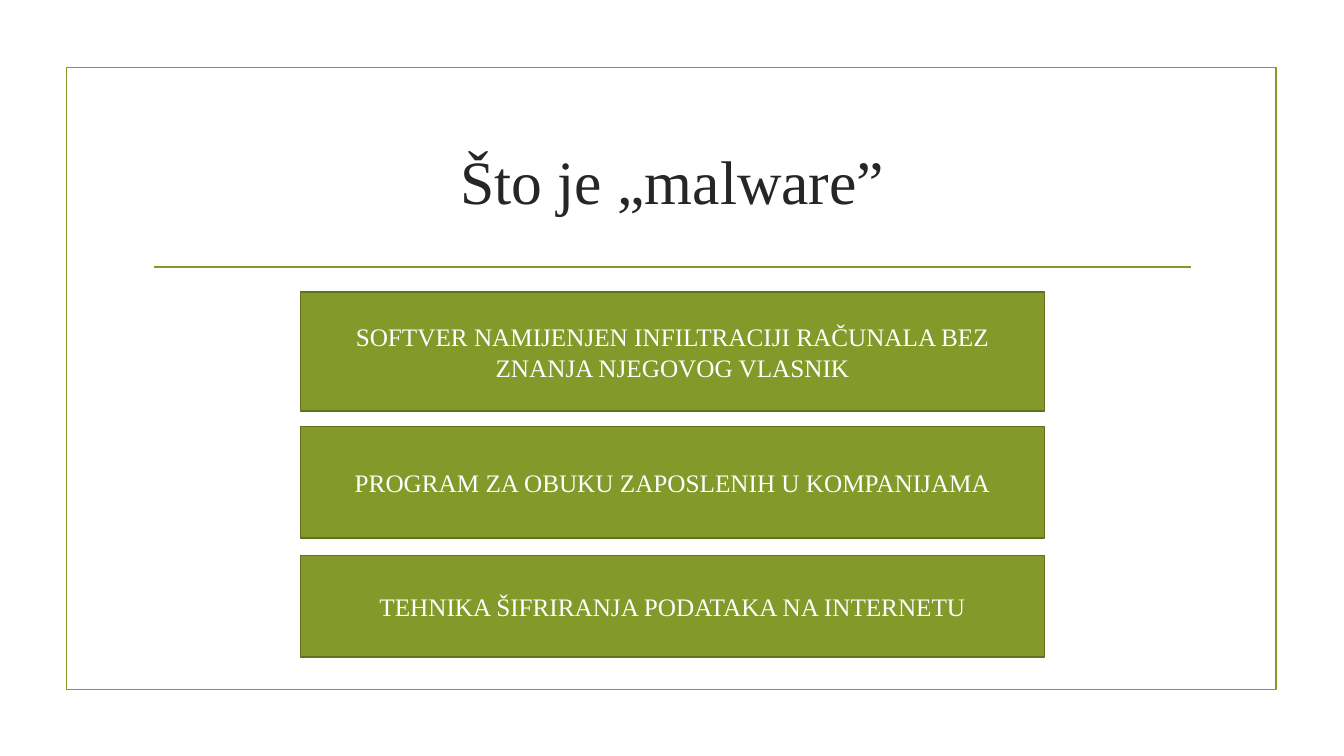
import lxml.etree
import pptx
import pptx.dml.color
import pptx.enum.shapes
import pptx.enum.text
import pptx.oxml.ns
import pptx.util

Inches = pptx.util.Inches
RGBColor = pptx.dml.color.RGBColor
Shapes = pptx.enum.shapes.MSO_SHAPE

OLIVE = RGBColor(0x83, 0x99, 0x2A)
DARK_OLIVE = RGBColor(0x61, 0x71, 0x1F)
CHARCOAL = RGBColor(0x26, 0x26, 0x26)
WHITE = RGBColor(0xFF, 0xFF, 0xFF)

ANSWER_LEFT, ANSWER_WIDTH = 2.98, 7.38
ANSWERS = [
    (Shapes.RECTANGLE, 2.9, 1.18,
     "SOFTVER NAMIJENJEN INFILTRACIJI RAČUNALA BEZ ZNANJA NJEGOVOG VLASNIK"),
    (Shapes.FLOWCHART_PROCESS, 4.23, 1.11,
     "PROGRAM ZA OBUKU ZAPOSLENIH U KOMPANIJAMA"),
    (Shapes.FLOWCHART_PROCESS, 5.51, 1.01,
     "TEHNIKA ŠIFRIRANJA PODATAKA NA INTERNETU"),
]


class QuizSlide:
    """Draws quiz elements in one style on the current slide."""

    font_name = "Times New Roman"
    line_width = pptx.util.Pt(1.25)

    def __init__(self, slide):
        self.slide = slide

    def set_text(self, shape, text, size, color):
        frame = shape.text_frame
        frame.word_wrap = True
        frame.vertical_anchor = pptx.enum.text.MSO_ANCHOR.MIDDLE
        paragraph = frame.paragraphs[0]
        paragraph.text = text
        paragraph.alignment = pptx.enum.text.PP_ALIGN.CENTER
        paragraph.font.name = self.font_name
        paragraph.font.size = pptx.util.Pt(size)
        paragraph.font.color.rgb = color

    def box(self, kind, left, top, width, height, line_color, fill_color=None):
        shape = self.slide.shapes.add_shape(
            kind, Inches(left), Inches(top), Inches(width), Inches(height))
        shape.shadow.inherit = False
        if fill_color is None:
            shape.fill.background()
        else:
            shape.fill.solid()
            shape.fill.fore_color.rgb = fill_color
        shape.line.color.rgb = line_color
        shape.line.width = self.line_width
        return shape

    def rule(self, left, right, top):
        connector = self.slide.shapes.add_connector(
            pptx.enum.shapes.MSO_CONNECTOR.STRAIGHT,
            Inches(left), Inches(top), Inches(right), Inches(top))
        connector.line.color.rgb = OLIVE
        connector.line.width = self.line_width
        lxml.etree.SubElement(
            connector._element.spPr, pptx.oxml.ns.qn("a:effectLst"))

    def title(self, text, left, top, width, height):
        shape = self.slide.shapes.add_textbox(
            Inches(left), Inches(top), Inches(width), Inches(height))
        self.set_text(shape, text, 44, CHARCOAL)

    def answer(self, kind, top, height, text):
        shape = self.box(kind, ANSWER_LEFT, top, ANSWER_WIDTH, height,
                         DARK_OLIVE, OLIVE)
        self.set_text(shape, text, 18, WHITE)


def main():
    presentation = pptx.Presentation()
    presentation.slide_width = Inches(13.33)
    presentation.slide_height = Inches(7.5)
    quiz = QuizSlide(
        presentation.slides.add_slide(presentation.slide_layouts[6]))
    quiz.box(Shapes.RECTANGLE, 0.66, 0.67, 12, 6.17, OLIVE)
    quiz.rule(1.53, 11.81, 2.65)
    quiz.title("Što je „malware”", 1.42, 1.07, 10.5, 1.43)
    for kind, top, height, text in ANSWERS:
        quiz.answer(kind, top, height, text)
    presentation.save("out.pptx")


if __name__ == "__main__":
    main()
